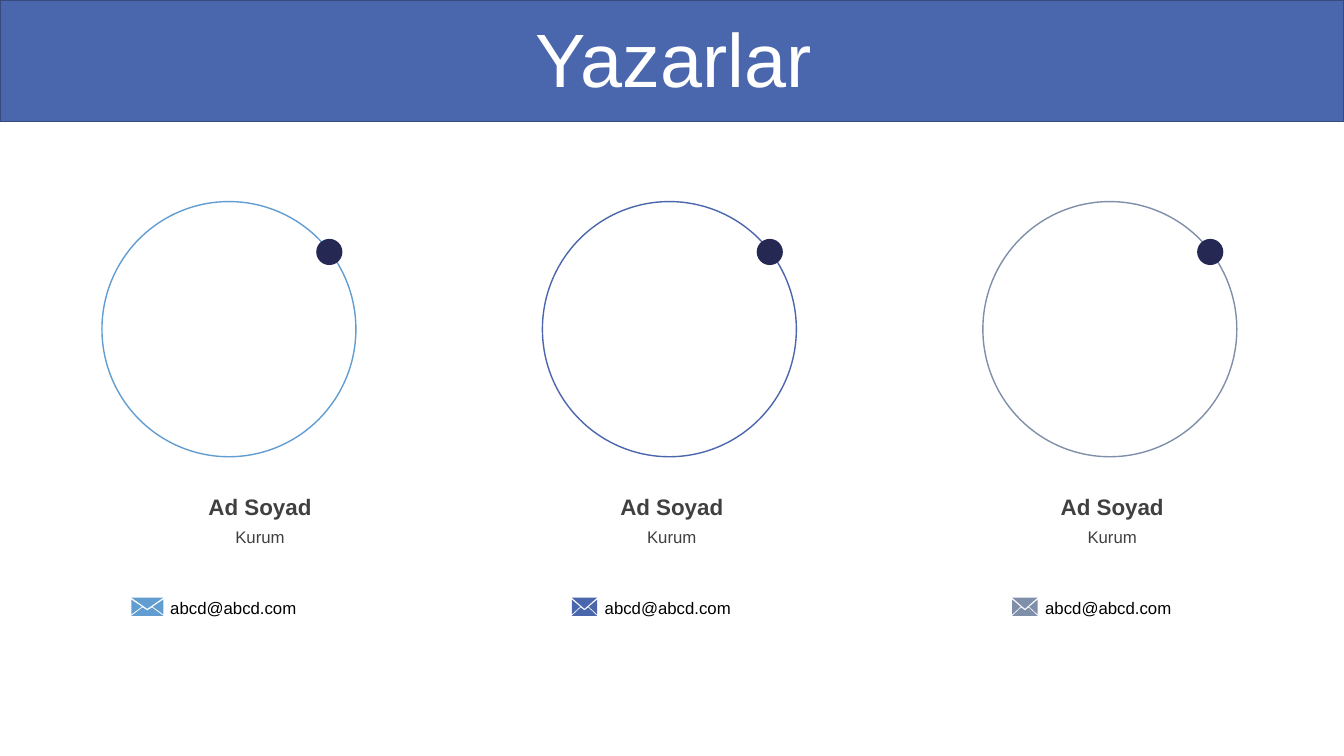
from pptx import Presentation
from pptx.dml.color import RGBColor
from pptx.enum.shapes import MSO_SHAPE as Shape
from pptx.enum.text import MSO_ANCHOR as Anchor, PP_ALIGN as Align
from pptx.util import Cm, Pt

WHITE = RGBColor(0xFF, 0xFF, 0xFF)
BLACK = RGBColor(0x00, 0x00, 0x00)
GRAY = RGBColor(0x40, 0x40, 0x40)
NAVY = RGBColor(0x24, 0x28, 0x52)
SKY = RGBColor(0x62, 0x9D, 0xD1)
BLUE = RGBColor(0x4A, 0x66, 0xAC)
DARK_BLUE = RGBColor(0x37, 0x4B, 0x7F)
STEEL = RGBColor(0x7F, 0x8F, 0xA9)

FIRST_LEFT = 2.57
PITCH = 11.1
AUTHORS = [
    ("Ad Soyad", "Kurum", "abcd@abcd.com", SKY, 1.26),
    ("Ad Soyad", "Kurum", "abcd@abcd.com", BLUE, 1),
    ("Ad Soyad", "Kurum", "abcd@abcd.com", STEEL, 1),
]
ENVELOPE_FLAPS = [
    [(0, 0), (100, 0), (50, 61)],
    [(0, 11), (33, 50), (0, 92)],
    [(100, 11), (100, 92), (67, 50)],
    [(65, 54), (100, 100), (0, 100), (35, 54), (50, 70)],
]


def paint(shape, fill=None, line=None):
    shape.shadow.inherit = False
    if fill is None:
        shape.fill.background()
    else:
        shape.fill.solid()
        shape.fill.fore_color.rgb = fill
    if line is None:
        shape.line.fill.background()
    else:
        shape.line.color.rgb = line
        shape.line.width = Pt(1)


def add_preset(slide, preset, left, top, width, height, fill=None, line=None):
    shape = slide.shapes.add_shape(preset, Cm(left), Cm(top), Cm(width), Cm(height))
    paint(shape, fill, line)


def add_text(slide, text, left, top, width, height, size, color,
             align=Align.CENTER, bold=False, anchor=Anchor.TOP, spacing=1.0):
    box = slide.shapes.add_textbox(Cm(left), Cm(top), Cm(width), Cm(height))
    frame = box.text_frame
    frame.word_wrap = True
    frame.vertical_anchor = anchor
    paragraph = frame.paragraphs[0]
    paragraph.text = text
    paragraph.alignment = align
    paragraph.line_spacing = spacing
    font = paragraph.font
    font.name = "Arial"
    font.size = Pt(size)
    font.bold = bold
    font.color.rgb = color


def add_envelope(slide, left, top, width, height, color):
    scale = (Cm(width) / 100, Cm(height) / 100)
    builder = slide.shapes.build_freeform(*ENVELOPE_FLAPS[0][0], scale=scale)
    for index, (start, *corners) in enumerate(ENVELOPE_FLAPS):
        if index:
            builder.move_to(*start)
        builder.add_line_segments(corners, close=True)
    paint(builder.convert_to_shape(Cm(left), Cm(top)), color)


def add_banner(slide, title):
    add_preset(slide, Shape.RECTANGLE, 0, 0, 33.87, 3.07, BLUE, DARK_BLUE)
    add_text(slide, title, 0.89, 0.58, 32.16, 2.01, 54, WHITE,
             anchor=Anchor.MIDDLE, spacing=0.9)


def add_author(slide, left, name, institution, email, color, stretch):
    add_preset(slide, Shape.OVAL, left, 5.08, 6.4, 6.43, line=color)
    add_preset(slide, Shape.OVAL, left + 5.4, 6.02, 0.66, 0.66, NAVY)

    caption_left = left + 0.48
    caption_width = 5.56 * stretch
    add_text(slide, name, caption_left, 12.29, caption_width, 0.94, 16, GRAY, bold=True)
    add_text(slide, institution, caption_left, 13.16, caption_width, 0.76, 12, GRAY)

    envelope_left = left + 0.74
    add_envelope(slide, envelope_left, 15.06, 0.64 * stretch, 0.46, color)
    add_text(slide, email, envelope_left + 0.58 * stretch, 14.94, 4.5 * stretch, 0.76,
             12, BLACK, align=Align.LEFT)


def main():
    presentation = Presentation()
    presentation.slide_width = Cm(33.87)
    presentation.slide_height = Cm(19.05)
    slide = presentation.slides.add_slide(presentation.slide_layouts[6])
    add_banner(slide, "Yazarlar")
    for column, author in enumerate(AUTHORS):
        add_author(slide, FIRST_LEFT + column * PITCH, *author)
    presentation.save("out.pptx")


if __name__ == "__main__":
    main()
